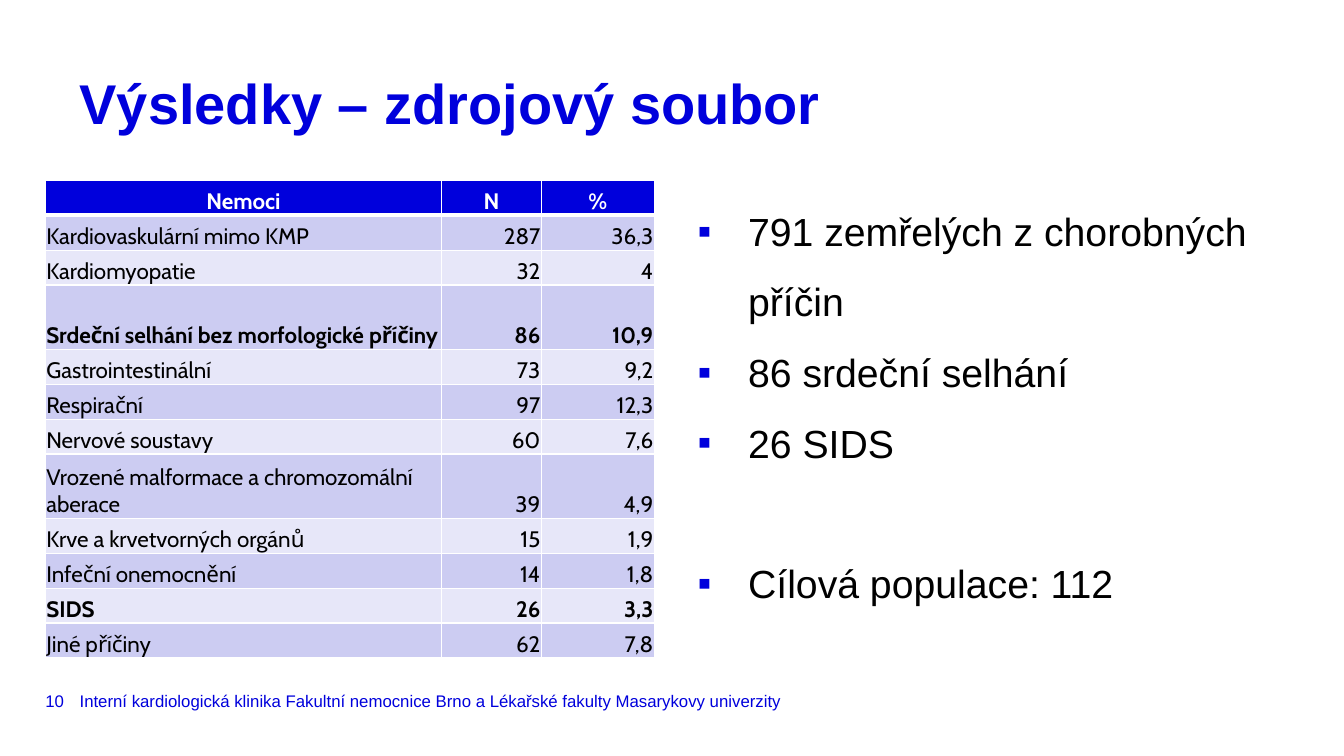
from lxml.etree import SubElement
from pptx import Presentation
from pptx.dml.color import RGBColor
from pptx.enum.text import MSO_ANCHOR, MSO_AUTO_SIZE, PP_ALIGN
from pptx.oxml import parse_xml
from pptx.oxml.ns import nsdecls, qn
from pptx.util import Inches, Pt

BLUE, WHITE, BLACK = "0000DC", "FFFFFF", "000000"
BANDS = ["E7E7F9", "CCCCF2"]
HEAD = ("Nemoci", "N", "%")
ROWS = [
    ("Kardiovaskulární mimo KMP", "287", "36,3"),
    ("Kardiomyopatie", "32", "4"),
    ("Srdeční selhání bez morfologické příčiny", "86", "10,9"),
    ("Gastrointestinální", "73", "9,2"),
    ("Respirační", "97", "12,3"),
    ("Nervové soustavy", "60", "7,6"),
    ("Vrozené malformace a chromozomální aberace", "39", "4,9"),
    ("Krve a krvetvorných orgánů", "15", "1,9"),
    ("Infeční onemocnění", "14", "1,8"),
    ("SIDS", "26", "3,3"),
    ("Jiné příčiny", "62", "7,8"),
]
BOLD = {0, 3, 10}
TALL = {3, 7}
POINTS = ["791 zemřelých z chorobných příčin", "86 srdeční selhání",
          "26 SIDS", "Cílová populace: 112"]
CLINIC = ("Interní kardiologická klinika Fakultní nemocnice Brno "
          "a Lékařské fakulty Masarykovy univerzity")


def color(value):
    return RGBColor.from_string(value)


def style(para, size, tone, bold=False, face="Arial"):
    for run in para.runs:
        run.font.name = face
        run.font.size = Pt(size)
        run.font.bold = bold
        run.font.color.rgb = color(tone)


def place(shape, box):
    shape.left, shape.top, shape.width, shape.height = map(Inches, box)


def setup(frame, anchor, wrap=True):
    """Remove the insets and fix anchor, wrapping and size of a text frame."""
    frame.margin_left = frame.margin_right = 0
    frame.margin_top = frame.margin_bottom = 0
    frame.vertical_anchor = anchor
    frame.word_wrap = wrap
    frame.auto_size = MSO_AUTO_SIZE.NONE


def add_title(slide, box, text):
    title = slide.shapes.title
    place(title, box)
    frame = title.text_frame
    setup(frame, MSO_ANCHOR.TOP)
    frame.text = text
    para = frame.paragraphs[0]
    para.alignment = PP_ALIGN.LEFT
    para.line_spacing = Pt(40)
    style(para, 40, BLUE, True)


def add_bullet(para):
    props = para._p.get_or_add_pPr()
    props.set("marL", str(Inches(0.58)))
    props.set("indent", str(Inches(-0.5)))
    tint = SubElement(props, qn("a:buClr"))
    SubElement(tint, qn("a:srgbClr")).set("val", BLUE)
    SubElement(props, qn("a:buChar")).set("char", "▪")


def add_points(slide, box, points):
    body = slide.placeholders[1]
    place(body, box)
    frame = body.text_frame
    setup(frame, MSO_ANCHOR.TOP)
    frame.text = "\n".join(points)
    for para in frame.paragraphs:
        add_bullet(para)
        para.line_spacing = 1.5
        para.space_before = Pt(0)
        style(para, 28, BLACK)
    frame.paragraphs[-1].space_before = Pt(50)


def add_edges(cell, top, bottom):
    props = cell._tc.get_or_add_tcPr()
    widths = {"lnL": 1, "lnR": 1, "lnT": top, "lnB": bottom}
    for place_no, (tag, width) in enumerate(widths.items()):
        props.insert(place_no, parse_xml(
            f'<a:{tag} {nsdecls("a")} w="{Pt(width)}"><a:solidFill>'
            f'<a:srgbClr val="{WHITE}"/></a:solidFill></a:{tag}>'))


def fill_cell(cell, text, row, col):
    cell.margin_left = cell.margin_top = cell.margin_right = Inches(0.01)
    cell.margin_bottom = 0
    cell.vertical_anchor = MSO_ANCHOR.BOTTOM
    cell.fill.solid()
    cell.fill.fore_color.rgb = color(BANDS[row % 2] if row else BLUE)
    add_edges(cell, 3 if row == 1 else 1, 1 if row else 3)
    cell.text_frame.text = text
    para = cell.text_frame.paragraphs[0]
    if row == 0:
        para.alignment = PP_ALIGN.CENTER
    else:
        para.alignment = PP_ALIGN.RIGHT if col else PP_ALIGN.LEFT
    style(para, 16, BLACK if row else WHITE, row in BOLD, "Cabin")


def add_causes(slide, box):
    data = [HEAD] + ROWS
    table = slide.shapes.add_table(len(data), len(HEAD), *map(Inches, box)).table
    for column, width in zip(table.columns, (3.93, 0.99, 1.12)):
        column.width = Inches(width)
    tall = 0.64
    low = (box[3] - tall * len(TALL)) / (len(data) - len(TALL))
    for row, values in enumerate(data):
        table.rows[row].height = Inches(tall if row in TALL else low)
        for col, text in enumerate(values):
            fill_cell(table.cell(row, col), text, row, col)


def add_note(slide, box, text, wrap=True):
    frame = slide.shapes.add_textbox(*map(Inches, box)).text_frame
    setup(frame, MSO_ANCHOR.MIDDLE, wrap)
    frame.text = text
    style(frame.paragraphs[0], 12, BLUE)


def add_footer(slide, box):
    left, top, width, height = box
    gap = 0.34
    add_note(slide, (left, top, 0.28, height), "10", False)
    add_note(slide, (left + gap, top, width - gap, height), CLINIC)


def main():
    deck = Presentation()
    deck.slide_width, deck.slide_height = Inches(13.33), Inches(7.5)
    slide = deck.slides.add_slide(deck.slide_layouts[1])
    add_title(slide, (0.79, 0.79, 11.76, 0.49), "Výsledky – zdrojový soubor")
    add_points(slide, (6.84, 1.82, 5.84, 4.71), POINTS)
    add_causes(slide, (0.45, 1.79, 6.04, 4.74))
    add_footer(slide, (0.45, 6.81, 9, 0.28))
    deck.save("out.pptx")


if __name__ == "__main__":
    main()
